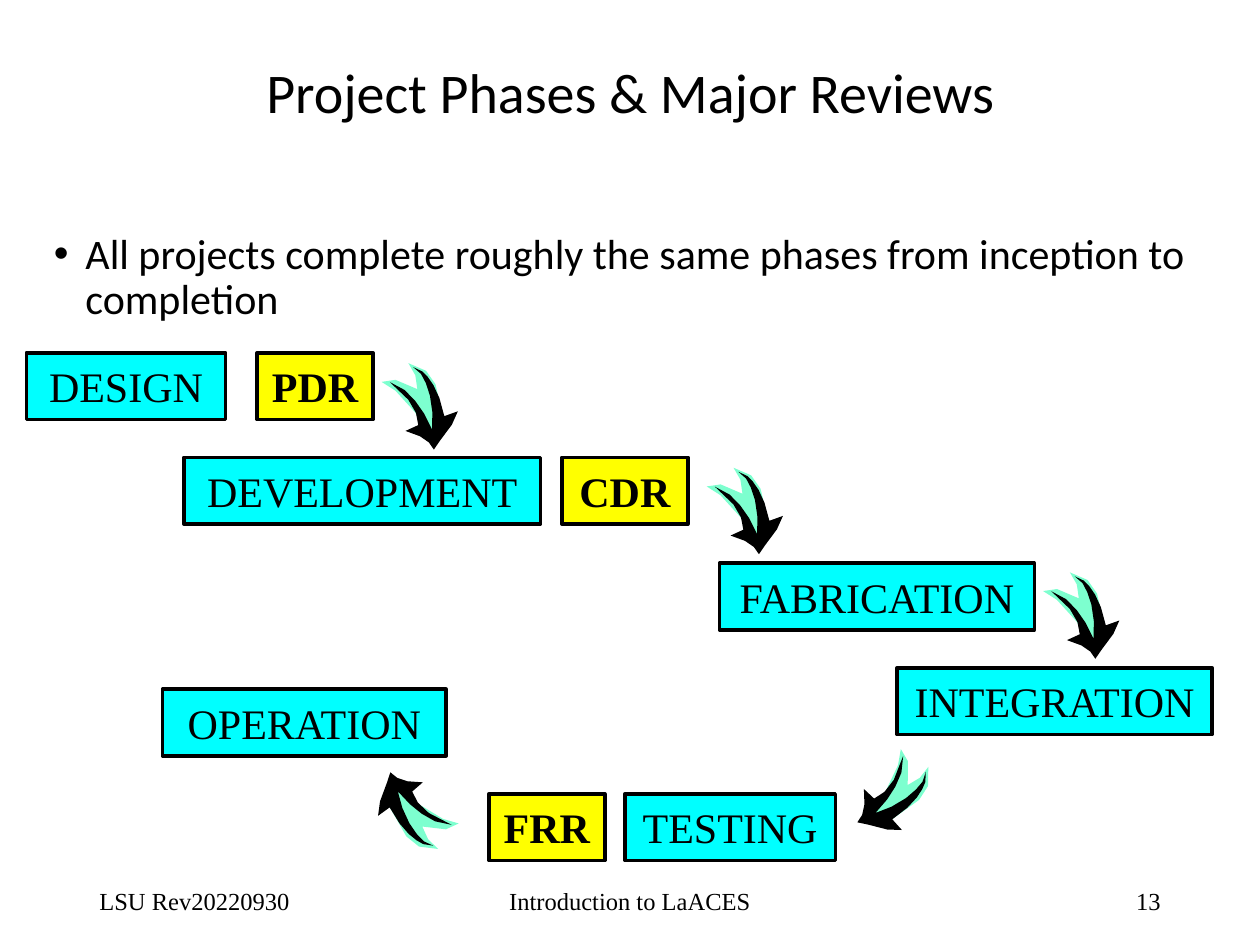
from dataclasses import dataclass

from lxml import etree
from pptx import Presentation
from pptx import util as u
from pptx.dml.color import RGBColor
from pptx.enum import shapes, text
from pptx.oxml import ns

BLACK = RGBColor(0x00, 0x00, 0x00)
CYAN = RGBColor(0x00, 0xFF, 0xFF)
YELLOW = RGBColor(0xFF, 0xFF, 0x00)
MINT = RGBColor(0x7D, 0xFF, 0xCF)
SANS = "Calibri"
SERIF = "Times New Roman"
CENTER = text.PP_ALIGN.CENTER
BOX_HEIGHT = 0.53

HIGHLIGHT = [
    (10, 5), (20, 21), (25, 11), (26, 0), (34, 13), (34, 26),
    (23, 54), (6, 60), (8, 35), (5, 12), (0, 0),
]
BLADE = [
    (12, 0), (18, 12), (20, 24), (20, 36), (18, 50), (26, 39), (32, 27),
    (35, 17), (36, 9), (34, 1), (38, 8), (39, 14), (39, 22), (37, 33),
    (32, 47), (43, 50), (33, 56), (18, 61), (10, 64), (10, 57), (7, 49),
    (0, 39), (11, 41), (15, 32), (16, 20), (14, 10),
]


@dataclass
class Label:
    words: str
    left: float
    top: float
    width: float
    height: float
    size: int
    font: str = SERIF
    align: text.PP_ALIGN = CENTER
    anchor: text.MSO_ANCHOR = text.MSO_ANCHOR.MIDDLE
    spacing: float = 1.0
    bulleted: bool = False


@dataclass
class Step:
    name: str
    left: float
    top: float
    width: float
    is_review: bool = False


@dataclass
class Arrow:
    highlight_at: tuple[float, float]
    blade_at: tuple[float, float]
    tilt: float


LABELS = [
    Label("Project Phases & Major Reviews", 1.55, 0.51, 6.91, 0.5, 32, SANS, spacing=0.9),
    Label("All projects complete roughly the same phases from inception to completion",
          0.33, 1.8, 9.25, 0.83, 24, SANS, text.PP_ALIGN.LEFT,
          text.MSO_ANCHOR.TOP, 0.9, True),
    Label("LSU Rev20220930", 0.69, 6.95, 2.25, 0.4, 14, align=text.PP_ALIGN.LEFT),
    Label("Introduction to LaACES", 3, 6.95, 4, 0.4, 14),
    Label("13", 7.06, 6.95, 2.25, 0.4, 14, align=text.PP_ALIGN.RIGHT),
]
STEPS = [
    Step("DESIGN", 0.21, 2.8, 1.58),
    Step("PDR", 2.04, 2.8, 0.92, True),
    Step("DEVELOPMENT", 1.46, 3.63, 2.83),
    Step("CDR", 4.46, 3.63, 1, True),
    Step("FABRICATION", 5.71, 4.47, 2.5),
    Step("INTEGRATION", 7.12, 5.3, 2.5),
    Step("TESTING", 4.96, 6.3, 1.67),
    Step("FRR", 3.88, 6.3, 0.92, True),
    Step("OPERATION", 1.29, 5.47, 2.25),
]
ARROWS = [
    Arrow((3.17, 2.88), (3.14, 2.92), 325.1),
    Arrow((5.75, 3.71), (5.72, 3.75), 325.1),
    Arrow((8.42, 4.54), (8.39, 4.58), 325.1),
    Arrow((6.96, 5.99), (6.86, 6.0), 32.8),
    Arrow((3.13, 6.18), (3.06, 6.1), 128.8),
]


def add_bullet(paragraph) -> None:
    properties = paragraph._p.get_or_add_pPr()
    properties.set("marL", str(u.Inches(0.25)))
    properties.set("indent", str(u.Inches(-0.25)))
    font = etree.SubElement(properties, ns.qn("a:buFont"))
    font.set("typeface", "Arial")
    etree.SubElement(properties, ns.qn("a:buChar")).set("char", "•")


def style_run(paragraph, font: str, size: int, bold: bool = False) -> None:
    run_font = paragraph.runs[0].font
    run_font.name = font
    run_font.size = u.Pt(size)
    run_font.bold = bold
    run_font.color.rgb = BLACK


def draw_label(slide, label: Label) -> None:
    box = slide.shapes.add_textbox(u.Inches(label.left), u.Inches(label.top),
                                   u.Inches(label.width), u.Inches(label.height))
    frame = box.text_frame
    frame.word_wrap = True
    frame.vertical_anchor = label.anchor
    frame.text = label.words
    paragraph = frame.paragraphs[0]
    paragraph.alignment = label.align
    paragraph.line_spacing = label.spacing
    if label.bulleted:
        add_bullet(paragraph)
    style_run(paragraph, label.font, label.size)


def draw_step(slide, step: Step) -> None:
    box = slide.shapes.add_shape(
        shapes.MSO_SHAPE.RECTANGLE, u.Inches(step.left), u.Inches(step.top),
        u.Inches(step.width), u.Inches(BOX_HEIGHT))
    box.shadow.inherit = False
    box.fill.solid()
    box.fill.fore_color.rgb = YELLOW if step.is_review else CYAN
    box.line.color.rgb = BLACK
    box.line.width = u.Pt(2)
    frame = box.text_frame
    frame.vertical_anchor = text.MSO_ANCHOR.MIDDLE
    frame.text = step.name
    frame.paragraphs[0].alignment = CENTER
    style_run(frame.paragraphs[0], SERIF, 24, step.is_review)


def draw_outline(slide, points: list[tuple[int, int]], at: tuple[float, float],
                 tilt: float, color: RGBColor) -> None:
    builder = slide.shapes.build_freeform(*points[0], scale=u.Inches(0.01))
    builder.add_line_segments(points[1:], close=True)
    outline = builder.convert_to_shape(u.Inches(at[0]), u.Inches(at[1]))
    outline.shadow.inherit = False
    outline.fill.solid()
    outline.fill.fore_color.rgb = color
    outline.line.fill.background()
    outline.rotation = tilt


def draw_arrow(slide, arrow: Arrow) -> None:
    draw_outline(slide, HIGHLIGHT, arrow.highlight_at, arrow.tilt, MINT)
    draw_outline(slide, BLADE, arrow.blade_at, arrow.tilt, BLACK)


def main() -> None:
    deck = Presentation()
    deck.slide_width = u.Inches(10)
    deck.slide_height = u.Inches(7.5)
    slide = deck.slides.add_slide(deck.slide_layouts[6])
    for label in LABELS:
        draw_label(slide, label)
    for step in STEPS:
        draw_step(slide, step)
    for arrow in ARROWS:
        draw_arrow(slide, arrow)
    deck.save("out.pptx")


if __name__ == "__main__":
    main()
